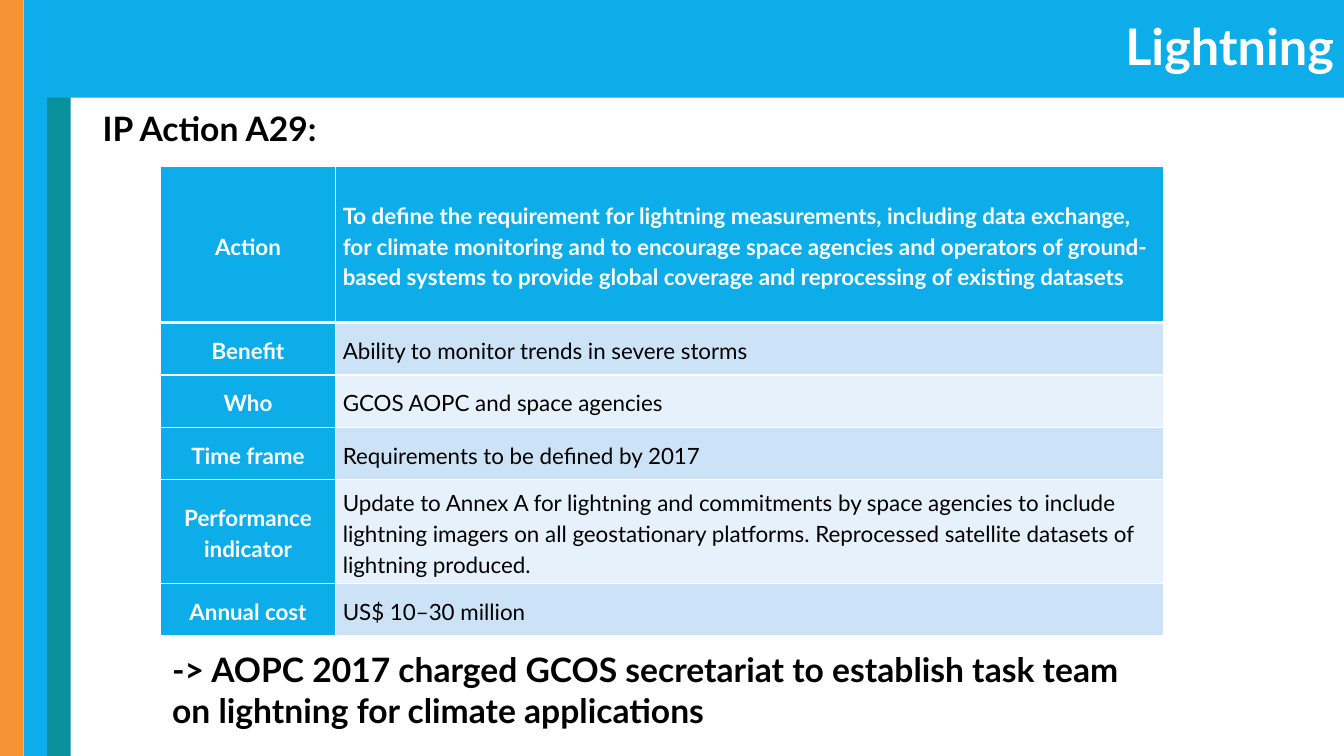
from lxml.etree import SubElement
from pptx import Presentation
from pptx.dml.color import RGBColor
from pptx.enum.shapes import MSO_SHAPE
from pptx.enum.text import MSO_ANCHOR, MSO_AUTO_SIZE, PP_ALIGN
from pptx.oxml.ns import qn
from pptx.util import Inches, Pt

COLORS = {
    "orange": "F49234",
    "blue": "0CADEA",
    "teal": "0A8F9D",
    "title": "0DADEA",
    "header": "0CADE9",
    "band_dark": "CCE3F7",
    "band_light": "E7F1FB",
    "white": "FFFFFF",
    "black": "000000",
}
STRIPE_WIDTH = 0.7 / 3
COLUMN_WIDTHS = [1.74, 8.21]
ROWS = [
    (1.55, "Action", "To define the requirement for lightning measurements, including data "
     "exchange, for climate monitoring and to encourage space agencies and operators of "
     "ground-based systems to provide global coverage and reprocessing of existing datasets"),
    (0.52, "Benefit", "Ability to monitor trends in severe storms"),
    (0.52, "Who", "GCOS AOPC and space agencies"),
    (0.52, "Time frame", "Requirements to be defined by 2017"),
    (1.03, "Performance indicator", "Update to Annex A for lightning and commitments by space "
     "agencies to include lightning imagers on all geostationary platforms. Reprocessed "
     "satellite datasets of lightning produced."),
    (0.52, "Annual cost", "US$ 10–30 million"),
]


def set_values(target, values):
    for name, value in values.items():
        setattr(target, name, value)


class SlideBuilder:
    font_name = "Lato"

    def __init__(self, slide):
        self.slide = slide

    def fill(self, target, color):
        target.fill.solid()
        target.fill.fore_color.rgb = RGBColor.from_string(COLORS[color])

    def add_text(self, text_frame, text, size, color, bold=True, **paragraph_format):
        paragraph = text_frame.paragraphs[0]
        set_values(paragraph, paragraph_format)
        run = paragraph.add_run()
        run.text = text
        set_values(run.font, {"name": self.font_name, "size": Pt(size), "bold": bold})
        run.font.color.rgb = RGBColor.from_string(COLORS[color])

    def rectangle(self, left, top, width, height, color):
        shape = self.slide.shapes.add_shape(
            MSO_SHAPE.RECTANGLE, Inches(left), Inches(top), Inches(width), Inches(height))
        shape.shadow.inherit = False
        shape.line.fill.background()
        self.fill(shape, color)
        return shape

    def text_box(self, left, top, width, height, text, wrap):
        box = self.slide.shapes.add_textbox(
            Inches(left), Inches(top), Inches(width), Inches(height))
        set_values(box.text_frame, {
            "word_wrap": wrap, "auto_size": MSO_AUTO_SIZE.SHAPE_TO_FIT_TEXT})
        self.add_text(box.text_frame, text, 24, "black")

    def borders(self, cell, widths):
        properties = cell._tc.get_or_add_tcPr()
        for side, width in widths.items():
            line = SubElement(properties, qn(f"a:ln{side}"), w=str(Pt(width)))
            solid = SubElement(line, qn("a:solidFill"))
            SubElement(solid, qn("a:srgbClr"), val=COLORS["white"])

    def cell(self, cell, text, fill, color, bold, align, widths):
        self.borders(cell, widths)
        self.fill(cell, fill)
        set_values(cell, {
            "vertical_anchor": MSO_ANCHOR.MIDDLE,
            "margin_left": Inches(0.07), "margin_right": Inches(0.07),
            "margin_top": 0, "margin_bottom": 0,
        })
        self.add_text(cell.text_frame, text, 16, color, bold,
                      alignment=align, line_spacing=1.15, space_after=Pt(3))

    def table(self, left, top, column_widths, rows):
        height = sum(row[0] for row in rows)
        table = self.slide.shapes.add_table(
            len(rows), len(column_widths), Inches(left), Inches(top),
            Inches(sum(column_widths)), Inches(height)).table
        table.horz_banding = False
        for column, width in zip(table.columns, column_widths):
            column.width = Inches(width)
        for index, (row_height, label, detail) in enumerate(rows):
            table.rows[index].height = Inches(row_height)
            widths = {"L": 1, "R": 1, "T": 3 if index == 1 else 1, "B": 3 if index == 0 else 1}
            band = "band_dark" if index % 2 else "band_light"
            style = ("header", "white", True) if index == 0 else (band, "black", False)
            self.cell(table.cell(index, 0), label, "header", "white", True,
                      PP_ALIGN.CENTER, widths)
            self.cell(table.cell(index, 1), detail, *style, PP_ALIGN.LEFT, widths)


def main():
    presentation = Presentation()
    set_values(presentation, {"slide_width": Inches(13.33), "slide_height": Inches(7.5)})
    builder = SlideBuilder(presentation.slides.add_slide(presentation.slide_layouts[6]))

    for index, color in enumerate(["orange", "blue", "teal"]):
        builder.rectangle(index * STRIPE_WIDTH, 0, STRIPE_WIDTH, 7.5, color)

    title = builder.rectangle(0.46, 0, 12.87, 0.97, "title")
    title.text_frame.vertical_anchor = MSO_ANCHOR.MIDDLE
    builder.add_text(title.text_frame, "Lightning", 36, "white",
                     alignment=PP_ALIGN.RIGHT, line_spacing=0.9)

    builder.text_box(0.92, 1.02, 2.4, 0.5, "IP Action A29:", False)
    builder.table(1.59, 1.65, COLUMN_WIDTHS, ROWS)
    builder.text_box(1.61, 6.39, 9.93, 0.91, "-> AOPC 2017 charged GCOS secretariat to "
                     "establish task team on lightning for climate applications", True)
    presentation.save("out.pptx")


if __name__ == "__main__":
    main()
